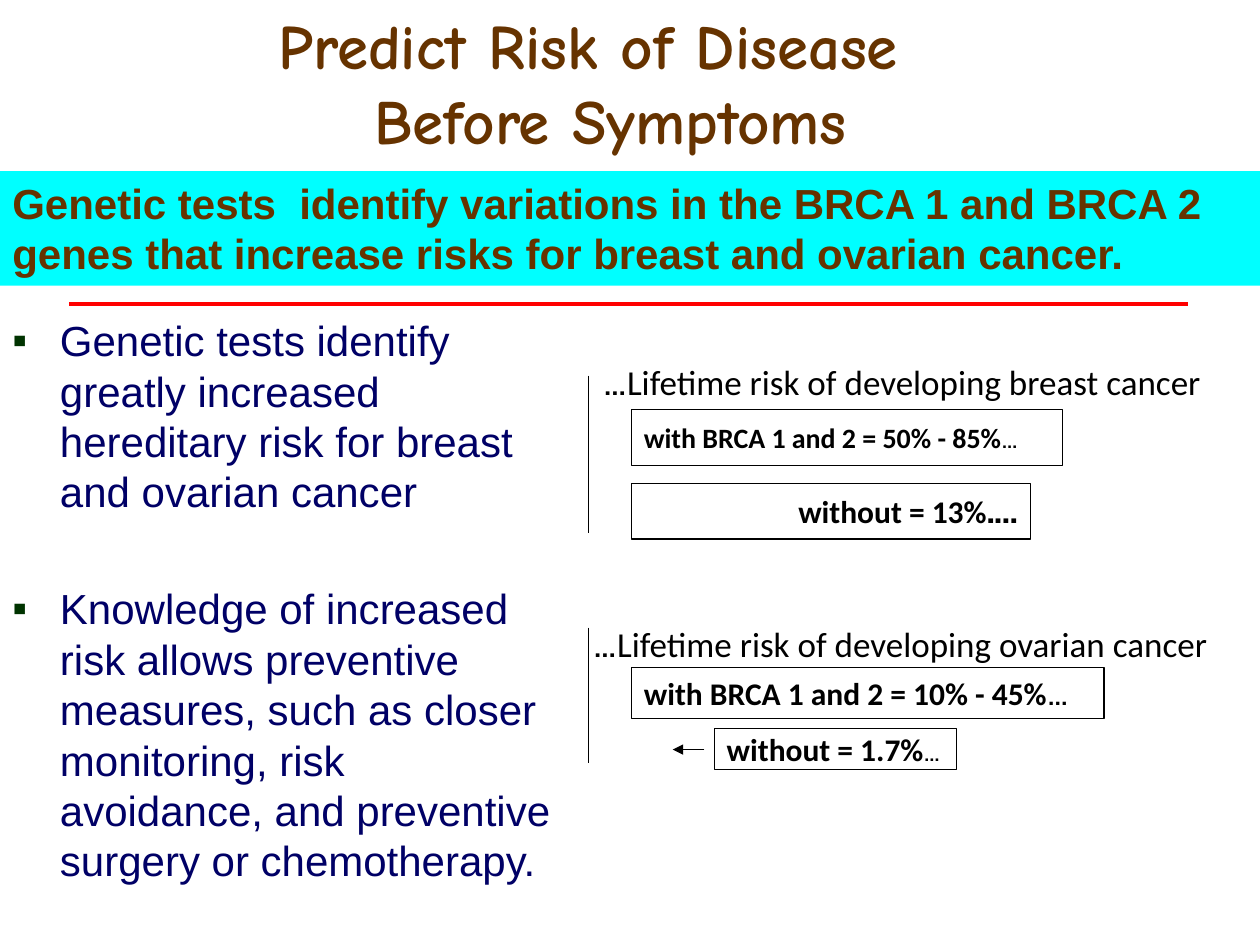
"""Build a slide on predicting the risk of disease from BRCA gene tests."""
from lxml.etree import SubElement
from pptx import Presentation
from pptx.dml.color import RGBColor
from pptx.enum.shapes import MSO_CONNECTOR, MSO_SHAPE
from pptx.enum.text import MSO_ANCHOR, PP_ALIGN
from pptx.oxml.ns import qn
from pptx.util import Cm, Pt

BLACK = RGBColor(0, 0, 0)
WHITE = RGBColor(255, 255, 255)
BROWN = RGBColor(0x66, 0x33, 0)
NAVY = RGBColor(0, 0, 0x66)
CYAN = RGBColor(0, 255, 255)
RED = RGBColor(255, 0, 0)
LEFT, RIGHT, MID = PP_ALIGN.LEFT, PP_ALIGN.RIGHT, PP_ALIGN.CENTER


def add_box(place, fill=None, edge=None, wrap=True):
    spot = [Cm(n) for n in place]
    if fill is None:
        shape = slide.shapes.add_textbox(*spot)
    else:
        shape = slide.shapes.add_shape(MSO_SHAPE.RECTANGLE, *spot)
        shape.shadow.inherit = False
        shape.fill.solid()
        shape.fill.fore_color.rgb = fill
        if edge is None:
            shape.line.fill.background()
        else:
            shape.line.color.rgb = edge
            shape.line.width = Pt(0.75)
    frame = shape.text_frame
    frame.word_wrap = wrap
    frame.vertical_anchor = MSO_ANCHOR.MIDDLE if edge is not None else MSO_ANCHOR.TOP
    return frame


def add_run(para, text, face, size, color, bold=False):
    run = para.add_run()
    run.text = text
    run.font.name = face
    run.font.size = Pt(size)
    run.font.color.rgb = color
    run.font.bold = bold


deck = Presentation()
deck.slide_width, deck.slide_height = Cm(25.4), Cm(19.05)
slide = deck.slides.add_slide(deck.slide_layouts[6])

para = add_box((0, 3.45, 25.4, 2.31), CYAN).paragraphs[0]
para.alignment = LEFT
add_run(para, "Genetic tests  identify variations in the BRCA 1 and BRCA 2 genes "
        "that increase risks for breast and ovarian cancer.", "Arial", 24, BROWN, True)

frame = add_box((0, 6.22, 11.51, 11.63))
points = [
    "Genetic tests identify greatly increased hereditary risk for breast and ovarian cancer",
    "Knowledge of increased risk allows preventive measures, such as closer monitoring, "
    "risk avoidance, and preventive surgery or chemotherapy.",
]
for i, text in enumerate(points):
    para = frame.add_paragraph() if i else frame.paragraphs[0]
    if i:
        para.space_before = Pt(38)
    props = para._p.get_or_add_pPr()
    props.set("marL", str(Cm(0.96)))
    props.set("indent", str(-Cm(0.96)))
    tint = SubElement(props, qn("a:buClr"))
    SubElement(tint, qn("a:srgbClr"), val="003300")
    SubElement(props, qn("a:buFont"), typeface="Arial")
    SubElement(props, qn("a:buChar"), char="▪")
    add_run(para, text, "Arial", 24, NAVY)

frame = add_box((3.38, 0, 17.86, 3.33))
for i, (text, inset) in enumerate([("Predict Risk of Disease", 0.9), ("Before Symptoms", 0)]):
    para = frame.add_paragraph() if i else frame.paragraphs[0]
    para.alignment = MID
    para._p.get_or_add_pPr().set("marR", str(Cm(inset)))
    add_run(para, text, "Comic Neue", 36, BROWN, True)

labels = [
    ((11.91, 7.14, 12.9, 1.12), "Lifetime risk of developing breast cancer…"),
    ((11.71, 12.42, 13.69, 1.12), "Lifetime risk of developing ovarian cancer…"),
]
for place, text in labels:
    para = add_box(place).paragraphs[0]
    para.alignment = LEFT
    para._p.get_or_add_pPr().set("rtl", "1")
    add_run(para, text, "Calibri", 20, BLACK)

risks = [
    ((12.73, 8.26, 8.69, 1.12), LEFT,
     [("…", 14, False), ("with BRCA 1 and 2 = 50% - 85%", 16, True)]),
    ((12.73, 9.75, 8.05, 1.12), RIGHT, [("….without = 13%", 18, True)]),
    ((12.73, 13.46, 9.53, 1.02), LEFT,
     [("…", 18, False), ("with BRCA 1 and 2 = 10% - 45%", 18, True)]),
    ((14.4, 14.68, 4.88, 0.84), LEFT,
     [("…", 14, False), ("without = 1.7%", 18, True)]),
]
for place, side, runs in risks:
    para = add_box(place, WHITE, BLACK, False).paragraphs[0]
    para.alignment = side
    para._p.get_or_add_pPr().set("rtl", "1")
    for text, size, bold in runs:
        add_run(para, text, "Calibri", size, BLACK, bold)

lines = [
    ((14.2, 15.11, 13.56, 15.11), BLACK, 0.75, True),
    ((11.86, 7.57, 11.86, 10.74), BLACK, 0.75, False),
    ((11.86, 12.65, 11.86, 15.39), BLACK, 0.75, False),
    ((1.4, 6.12, 23.95, 6.12), RED, 2.25, False),
]
for ends, color, width, arrow in lines:
    line = slide.shapes.add_connector(MSO_CONNECTOR.STRAIGHT, *[Cm(n) for n in ends])
    line.line.color.rgb = color
    line.line.width = Pt(width)
    if arrow:
        SubElement(line.line._get_or_add_ln(), qn("a:tailEnd"), type="triangle")
    SubElement(line._element.spPr, qn("a:effectLst"))

deck.save("out.pptx")
